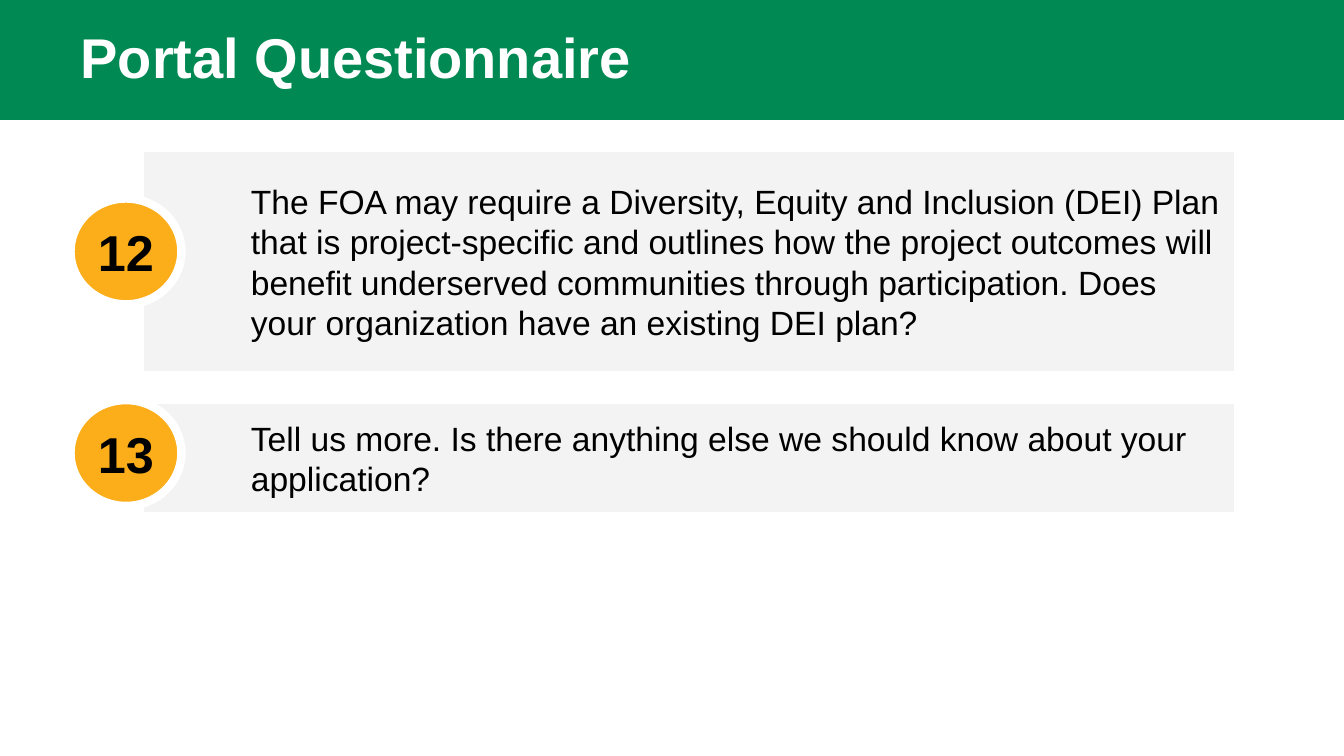
"""Build the portal questionnaire slide with two numbered questions."""
from dataclasses import dataclass

from pptx import Presentation
from pptx.dml.color import RGBColor
from pptx.enum.shapes import MSO_SHAPE as Preset
from pptx.enum.text import MSO_ANCHOR as Anchor, MSO_AUTO_SIZE as AutoSize, PP_ALIGN as Align
from pptx.shapes.autoshape import Shape
from pptx.slide import Slide
from pptx.util import Pt

GREEN, AMBER, GREY, WHITE, BLACK = "008953", "FBAE1A", "F3F3F3", "FFFFFF", "000000"
SLIDE_WIDTH, SLIDE_HEIGHT = 960, 540
PANEL_LEFT, PANEL_WIDTH = 100.1, 784.1
BADGE_LEFT, BADGE_WIDTH, BADGE_HEIGHT = 50.4, 79.2, 75.6
MARGIN, INDENT, OUTLINE = 7.2, 72, 6


@dataclass
class Question:
    number: int
    text: str
    top: float
    height: float
    badge_top: float


QUESTIONS = [
    Question(
        12,
        "The FOA may require a Diversity, Equity and Inclusion (DEI) Plan that is "
        "project-specific and outlines how the project outcomes will benefit "
        "underserved communities through participation. Does your organization "
        "have an existing DEI plan?",
        105.8, 162, 141.8,
    ),
    Question(
        13,
        "Tell us more. Is there anything else we should know about your application?",
        285.8, 82.8, 285.8,
    ),
]


def color(value: str) -> RGBColor:
    return RGBColor.from_string(value)


def write_text(shape: Shape, text: str, *, size: float, fill: str = BLACK,
               bold: bool = False, align: Align = Align.LEFT, indent: float = 0,
               top: float = MARGIN, bottom: float = MARGIN,
               line_spacing: float = 1.0) -> None:
    frame = shape.text_frame
    frame.word_wrap = True
    frame.auto_size = AutoSize.NONE
    frame.vertical_anchor = Anchor.MIDDLE
    frame.margin_left = frame.margin_right = Pt(MARGIN)
    frame.margin_top, frame.margin_bottom = Pt(top), Pt(bottom)
    paragraph = frame.paragraphs[0]
    paragraph.alignment = align
    paragraph.line_spacing = line_spacing
    if indent:
        properties = paragraph._p.get_or_add_pPr()
        properties.set("marL", str(Pt(indent)))
        properties.set("indent", "0")
    run = paragraph.add_run()
    run.text = text
    run.font.name = "Arial"
    run.font.size = Pt(size)
    run.font.bold = bold
    run.font.color.rgb = color(fill)


def add_block(slide: Slide, preset: Preset, left: float, top: float, width: float,
              height: float, fill: str, outline: float = 0) -> Shape:
    shape = slide.shapes.add_shape(preset, Pt(left), Pt(top), Pt(width), Pt(height))
    shape.shadow.inherit = False
    shape.fill.solid()
    shape.fill.fore_color.rgb = color(fill)
    if outline:
        shape.line.color.rgb = color(WHITE)
        shape.line.width = Pt(outline)
    else:
        shape.line.fill.background()
    return shape


def add_header(slide: Slide, text: str) -> None:
    band = add_block(slide, Preset.RECTANGLE, 0, 0, SLIDE_WIDTH, 85.7, GREEN)
    title = slide.shapes.title
    title.element.addprevious(band.element)
    title.left, title.top = Pt(BADGE_LEFT), Pt(0)
    title.width, title.height = Pt(864), Pt(82.8)
    write_text(title, text, size=40, fill=WHITE, bold=True, top=3.6, bottom=0,
               line_spacing=0.9)


def add_question(slide: Slide, question: Question) -> None:
    panel = add_block(slide, Preset.RECTANGLE, PANEL_LEFT, question.top,
                      PANEL_WIDTH, question.height, GREY, OUTLINE)
    write_text(panel, question.text, size=24, indent=INDENT)
    badge = add_block(slide, Preset.OVAL, BADGE_LEFT, question.badge_top,
                      BADGE_WIDTH, BADGE_HEIGHT, AMBER, OUTLINE)
    write_text(badge, str(question.number), size=36, bold=True, align=Align.CENTER)


def main() -> None:
    presentation = Presentation()
    presentation.slide_width, presentation.slide_height = Pt(SLIDE_WIDTH), Pt(SLIDE_HEIGHT)
    slide = presentation.slides.add_slide(presentation.slide_layouts[5])
    add_header(slide, "Portal Questionnaire")
    for question in QUESTIONS:
        add_question(slide, question)
    presentation.save("out.pptx")


if __name__ == "__main__":
    main()
